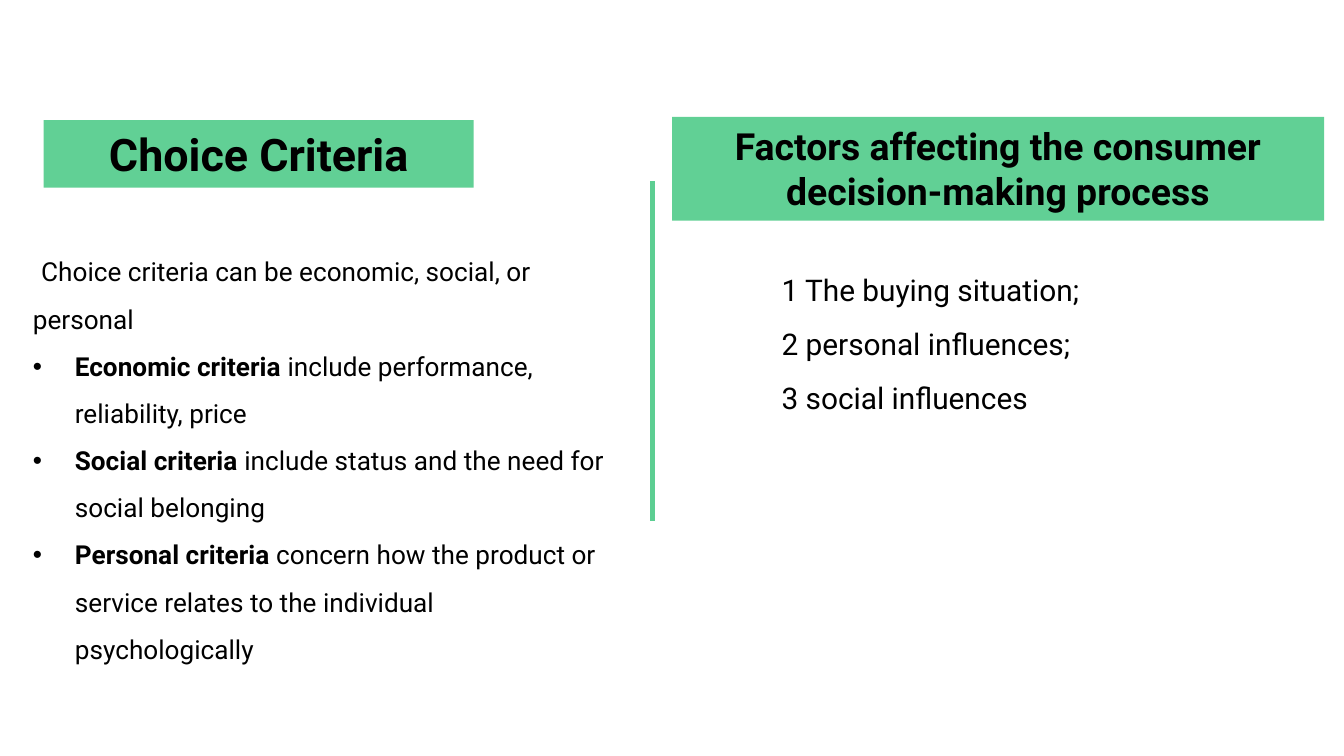
from lxml import etree
from pptx import Presentation
from pptx.dml.color import RGBColor
from pptx.enum import shapes, text
from pptx.oxml import ns
from pptx.util import Pt

BLACK = RGBColor(0x00, 0x00, 0x00)
BAND_GREEN = RGBColor(0x61, 0xD0, 0x95)
LINE_GREEN = RGBColor(0x5C, 0xCE, 0x92)
FONT = "Roboto"
BULLET_INDENT = Pt(22.5)

# Each paragraph: (is bulleted, [(words, size, bold), ...])
CRITERIA = [
    (False, [(" ", 18, False),
             ("Choice criteria can be economic, social, or personal", 14, False)]),
    (True, [("Economic criteria ", 14, True),
            ("include performance, reliability, price", 14, False)]),
    (True, [("Social criteria ", 14, True),
            ("include status and the need for social belonging", 14, False)]),
    (True, [("Personal criteria ", 14, True),
            ("concern how the product or service relates to the individual "
             "psychologically", 14, False)]),
]
FACTORS = [(False, [(words, 16, False)]) for words in (
    "1 The buying situation;", "2 personal influences;", "3 social influences")]


def add_run(p, words, size, bold):
    r = p.add_run()
    r.text = words
    r.font.name = FONT
    r.font.size = Pt(size)
    r.font.bold = bold
    r.font.color.rgb = BLACK


def set_bullet(p, bulleted):
    pPr = p._p.get_or_add_pPr()
    indent = BULLET_INDENT if bulleted else 0
    pPr.set("marL", str(indent))
    pPr.set("indent", str(-indent))
    if not bulleted:
        etree.SubElement(pPr, ns.qn("a:buNone"))
        return
    colour = etree.SubElement(pPr, ns.qn("a:buClr"))
    etree.SubElement(colour, ns.qn("a:srgbClr"), val=str(BLACK))
    etree.SubElement(pPr, ns.qn("a:buFont"), typeface="Arial")
    etree.SubElement(pPr, ns.qn("a:buChar"), char="•")


def fill_placeholder(sp, box, paragraphs, align, spacing):
    """Move a placeholder to box (left, top, width, height) and write its text."""
    sp.left, sp.top, sp.width, sp.height = (Pt(v) for v in box)
    tf = sp.text_frame
    tf.word_wrap = True
    tf.auto_size = text.MSO_AUTO_SIZE.NONE
    tf.vertical_anchor = text.MSO_ANCHOR.TOP
    for i, (bulleted, runs) in enumerate(paragraphs):
        p = tf.add_paragraph() if i else tf.paragraphs[0]
        set_bullet(p, bulleted)
        p.alignment = align
        p.line_spacing = spacing
        p.space_before = Pt(0)
        for run in runs:
            add_run(p, *run)


def heading(sp, box, words, size):
    fill_placeholder(sp, box, [(False, [(words, size, True)])],
                     text.PP_ALIGN.CENTER, 1.0)
    sp.fill.solid()
    sp.fill.fore_color.rgb = BAND_GREEN


def body(sp, box, paragraphs):
    fill_placeholder(sp, box, paragraphs, text.PP_ALIGN.LEFT, 1.5)


def divider(slide, x, top, height):
    line = slide.shapes.add_connector(
        shapes.MSO_CONNECTOR.STRAIGHT, Pt(x), Pt(top), Pt(x), Pt(top + height))
    line.line.color.rgb = LINE_GREEN
    line.line.width = Pt(3)
    etree.SubElement(line._element.spPr, ns.qn("a:effectLst"))


def comparison_slide(prs):
    slide = prs.slides.add_slide(prs.slide_layouts.get_by_name("Comparison"))
    parts = {sp.placeholder_format.idx: sp for sp in slide.placeholders}
    body(parts[2], (10.4, 118.3, 328.3, 240.5), CRITERIA)
    heading(parts[1], (23.4, 64.3, 230.4, 36.3), "Choice Criteria", 24)
    heading(parts[3], (360, 62.6, 349.4, 55.7),
            "Factors affecting the consumer decision-making process", 20)
    body(parts[4], (411.5, 132.5, 262, 94.3), FACTORS)
    divider(slide, 349.5, 97, 182)
    for idx, sp in parts.items():
        if idx not in (1, 2, 3, 4):
            sp.element.getparent().remove(sp.element)


def main():
    prs = Presentation()
    prs.slide_width, prs.slide_height = Pt(720), Pt(405)
    comparison_slide(prs)
    prs.save("out.pptx")


if __name__ == "__main__":
    main()
